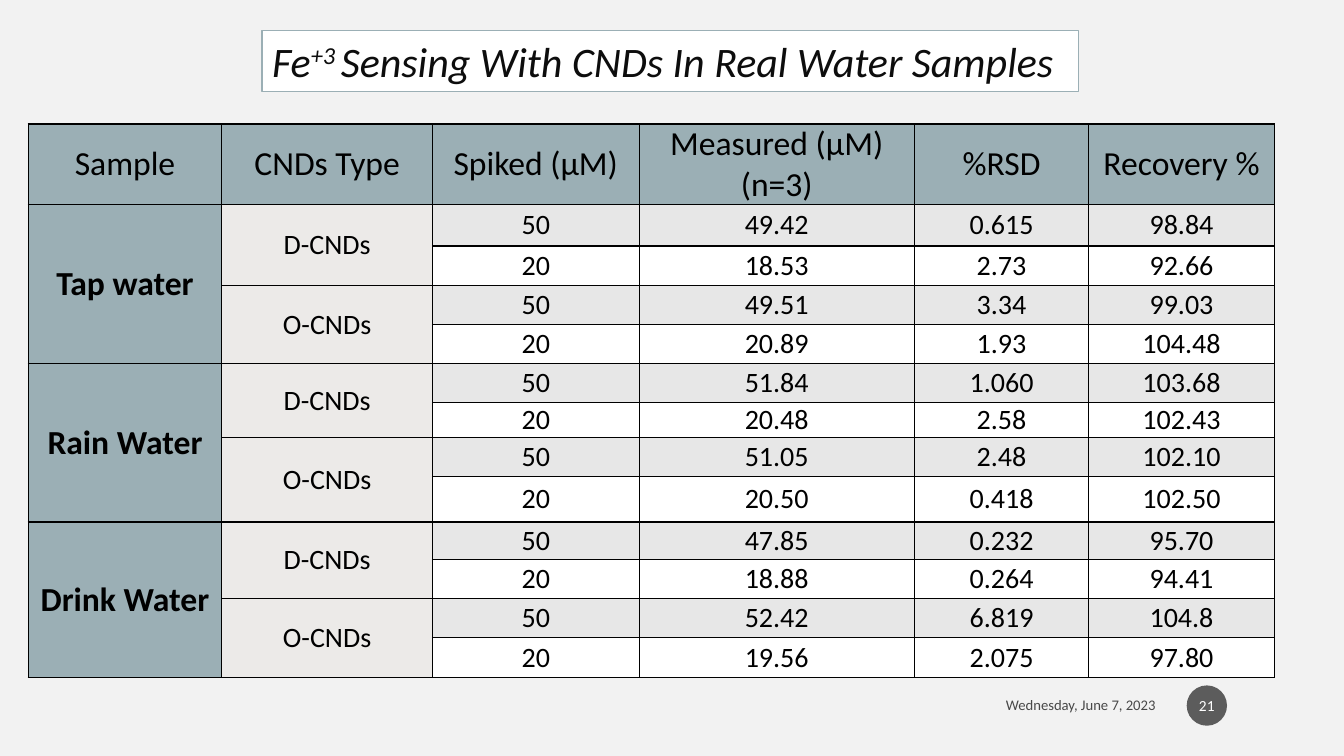
from lxml.etree import SubElement
from pptx import Presentation
from pptx.dml.color import RGBColor
from pptx.enum.shapes import MSO_SHAPE as Shape
from pptx.enum.text import MSO_ANCHOR as Anchor, MSO_AUTO_SIZE as AutoSize, PP_ALIGN as Align
from pptx.oxml.ns import qn
from pptx.util import Inches, Pt

TITLE = [("Fe", False), ("+3 ", True), ("Sensing With CNDs In Real Water Samples", False)]
DATE, PAGE = "Wednesday, June 7, 2023", "21"
HEADERS = ["Sample", "CNDs Type", "Spiked (µM)", "Measured (µM)\n(n=3)", "%RSD", "Recovery %"]
SAMPLES = ["Tap water", "Rain Water", "Drink Water"]
DOT_TYPES = ["D-CNDs", "O-CNDs"]
SPIKES = ["50", "20"]
# Measured, %RSD and recovery, ordered by sample, dot type and spike
RESULTS = [
    ("49.42", "0.615", "98.84"),
    ("18.53", "2.73", "92.66"),
    ("49.51", "3.34", "99.03"),
    ("20.89", "1.93", "104.48"),
    ("51.84", "1.060", "103.68"),
    ("20.48", "2.58", "102.43"),
    ("51.05", "2.48", "102.10"),
    ("20.50", "0.418", "102.50"),
    ("47.85", "0.232", "95.70"),
    ("18.88", "0.264", "94.41"),
    ("52.42", "6.819", "104.8"),
    ("19.56", "2.075", "97.80"),
]
COLUMN_WIDTHS = [1.92, 2.09, 2.05, 2.73, 1.73, 1.84]
ROW_HEIGHTS = [0.75, 0.41, 0.39, 0.39, 0.39, 0.38, 0.35, 0.39, 0.45, 0.37, 0.39, 0.39, 0.39]
BLACK, WHITE, SLATE = "000000", "FFFFFF", "9BAFB5"
TYPE_FILL, BAND_FILL = "ECEAE8", "E7E7E7"


def paint(color_format, color, alpha=None):
    """Set a hex colour, with opacity in percent if given."""
    if hasattr(color_format, "solid"):
        color_format.solid()
        color_format = color_format.fore_color
    color_format.rgb = RGBColor.from_string(color)
    if alpha:
        solid = color_format._xFill
        SubElement(solid.find(qn("a:srgbClr")), qn("a:alpha"), val=str(alpha * 1000))


def format_text(text_frame, size, color, align, alpha=None, bold=False):
    for paragraph in text_frame.paragraphs:
        paragraph.alignment = align
        for run in paragraph.runs:
            run.font.name, run.font.size, run.font.bold = "Calibri", Pt(size), bold
            paint(run.font.fill, color, alpha)


def add_borders(cell):
    properties = cell._tc.get_or_add_tcPr()
    for side in ("lnL", "lnR", "lnT", "lnB"):
        line = SubElement(properties, qn(f"a:{side}"), w=str(Pt(1)))
        SubElement(SubElement(line, qn("a:solidFill")), qn("a:srgbClr"), val=BLACK)


def cell_style(row, column):
    """Return fill, text size and boldness."""
    if row == 0 or column == 0:
        return SLATE, 24, row > 0
    if column == 1:
        return TYPE_FILL, 20, False
    return (BAND_FILL if row % 2 else WHITE), 20, False


def add_results(slide):
    rows = [HEADERS]
    for index, result in enumerate(RESULTS):
        sample = SAMPLES[index // 4] if index % 4 == 0 else ""
        dot_type = DOT_TYPES[index // 2 % 2] if index % 2 == 0 else ""
        rows.append([sample, dot_type, SPIKES[index % 2], *result])
    table = slide.shapes.add_table(
        len(rows), len(HEADERS), Inches(0.28), Inches(1.23),
        Inches(sum(COLUMN_WIDTHS)), Inches(sum(ROW_HEIGHTS))).table
    for column, width in zip(table.columns, COLUMN_WIDTHS):
        column.width = Inches(width)
    for row, height in zip(table.rows, ROW_HEIGHTS):
        row.height = Inches(height)
    for row, texts in enumerate(rows):
        for column, text in enumerate(texts):
            cell = table.cell(row, column)
            fill, size, bold = cell_style(row, column)
            add_borders(cell)
            paint(cell.fill, fill)
            cell.vertical_anchor = Anchor.MIDDLE
            cell.margin_left = cell.margin_right = Inches(0.06)
            cell.margin_top = cell.margin_bottom = 0
            cell.text_frame.text = text
            format_text(cell.text_frame, size, BLACK, Align.CENTER, bold=bold)
    for column, span in ((0, 4), (1, 2)):
        for row in range(1, len(rows), span):
            table.cell(row, column).merge(table.cell(row + span - 1, column))


def add_title(slide):
    box = slide.shapes.add_shape(
        Shape.RECTANGLE, Inches(2.6), Inches(0.3), Inches(8.1), Inches(0.61))
    box.shadow.inherit = False
    paint(box.fill, WHITE)
    paint(box.line.fill, SLATE)
    box.line.width = Pt(1)
    text_frame = box.text_frame
    text_frame.word_wrap = False
    text_frame.auto_size = AutoSize.SHAPE_TO_FIT_TEXT
    text_frame.vertical_anchor = Anchor.TOP
    paragraph = text_frame.paragraphs[0]
    paragraph.space_after = Pt(10)
    for text, raised in TITLE:
        run = paragraph.add_run()
        run.text = text
        run.font.italic = True
        if raised:
            run.font._element.set("baseline", "30000")
    format_text(text_frame, 30, "0D0D0D", Align.LEFT)


def add_footer(slide):
    date = slide.shapes.add_textbox(Inches(8.55), Inches(6.82), Inches(3.01), Inches(0.35))
    date.text_frame.word_wrap = True
    date.text_frame.vertical_anchor = Anchor.MIDDLE
    date.text_frame.text = DATE
    format_text(date.text_frame, 10.5, BLACK, Align.RIGHT, alpha=70)

    badge = slide.shapes.add_shape(
        Shape.OVAL, Inches(11.77), Inches(6.8), Inches(0.4), Inches(0.4))
    badge.shadow.inherit = False
    paint(badge.fill, "1D1D1D", alpha=70)
    badge.line.fill.background()
    text_frame = badge.text_frame
    text_frame.margin_left = text_frame.margin_right = Inches(0.02)
    text_frame.vertical_anchor = Anchor.MIDDLE
    text_frame.text = PAGE
    format_text(text_frame, 11, WHITE, Align.CENTER)


def main():
    presentation = Presentation()
    presentation.slide_width, presentation.slide_height = Inches(13.33), Inches(7.5)
    slide = presentation.slides.add_slide(presentation.slide_layouts[6])
    paint(slide.background.fill, "F2F2F2")
    add_footer(slide)
    add_results(slide)
    add_title(slide)
    presentation.save("out.pptx")


if __name__ == "__main__":
    main()
